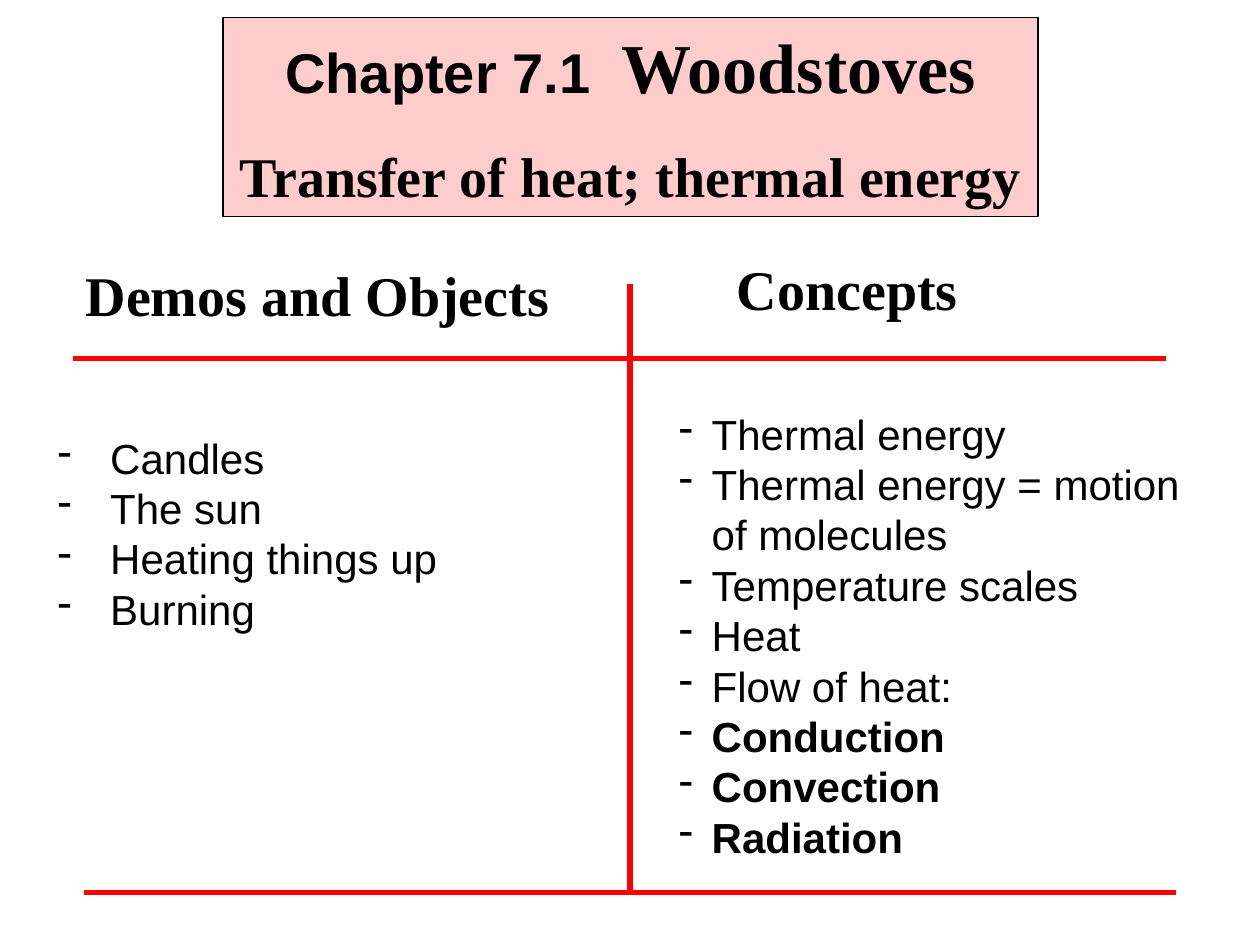
"""Build the Woodstoves chapter slide with its two-column overview."""
import pptx
import pptx.dml.color
import pptx.enum.shapes
import pptx.enum.text
import pptx.oxml
import pptx.util
from pptx.oxml.ns import qn

Pt = pptx.util.Pt
Color = pptx.dml.color.RGBColor.from_string

THEME = {
    "text": "000000", "banner": "FFCCCC", "rule": "FF0000",
    "sans": "Arial", "serif": "Times New Roman",
    "title": 40, "heading": 32, "body": 24,
    "border": 0.75, "rule_width": 3, "title_gap": 19.2,
}
BANNER = (127.4, 10.1, 465.8, 113.8)
CHAPTER = [("Chapter 7.1  ", "sans", "heading"), ("Woodstoves", "serif", "title")]
SUBTITLE = "Transfer of heat; thermal energy"
HEADINGS = [
    ("Demos and Objects", (41.8, 145.4, 289.4, 45.4)),
    ("Concepts", (414, 141.8, 154.8, 45.4)),
]
LISTS = [
    ((25.9, 243.4, 318.2, 123.8), 30,
     ["Candles", "The sun", "Heating things up", "Burning"], []),
    ((380.9, 229.7, 310.3, 269.3), 18.7,
     ["Thermal energy", "Thermal energy = motion of molecules",
      "Temperature scales", "Heat", "Flow of heat:"],
     ["Conduction", "Convection", "Radiation"]),
]
RULES = [
    (48, 510, 672, 510),
    (42, 205, 666, 205),
    (360, 162, 360, 510),
]


def set_font(font, family, size, bold):
    font.name = THEME[family]
    font.size = Pt(THEME[size])
    font.bold = bold
    font.color.rgb = Color(THEME["text"])


def add_text_box(slide, box):
    frame = slide.shapes.add_textbox(*map(Pt, box)).text_frame
    frame.word_wrap = True
    return frame


def add_banner(slide):
    shape = slide.shapes.add_shape(
        pptx.enum.shapes.MSO_SHAPE.RECTANGLE, *map(Pt, BANNER))
    shape.shadow.inherit = False
    shape.fill.solid()
    shape.fill.fore_color.rgb = Color(THEME["banner"])
    shape.line.color.rgb = Color(THEME["text"])
    shape.line.width = Pt(THEME["border"])
    frame = shape.text_frame
    frame.word_wrap = False
    frame.vertical_anchor = pptx.enum.text.MSO_ANCHOR.TOP
    chapter, subtitle = frame.paragraphs[0], frame.add_paragraph()
    for text, family, size in CHAPTER:
        run = chapter.add_run()
        run.text = text
        set_font(run.font, family, size, True)
    subtitle.text = SUBTITLE
    subtitle.space_before = Pt(THEME["title_gap"])
    set_font(subtitle.font, "serif", "heading", True)
    for paragraph in frame.paragraphs:
        paragraph.alignment = pptx.enum.text.PP_ALIGN.CENTER


def add_heading(slide, text, box):
    paragraph = add_text_box(slide, box).paragraphs[0]
    paragraph.text = text
    set_font(paragraph.font, "serif", "heading", True)


def add_list(slide, box, indent, plain, bold):
    frame = add_text_box(slide, box)
    for index, text in enumerate(plain + bold):
        paragraph = frame.add_paragraph() if index else frame.paragraphs[0]
        paragraph.text = text
        set_font(paragraph.font, "sans", "body", index >= len(plain))
        properties = paragraph._p.get_or_add_pPr()
        properties.set("marL", str(Pt(indent)))
        properties.set("indent", str(-Pt(indent)))
        bullet = pptx.oxml.parse_xml(
            '<a:buChar xmlns:a="http://schemas.openxmlformats.org/drawingml/2006/main" char="-"/>')
        properties.insert_element_before(bullet, "a:tabLst", "a:defRPr", "a:extLst")


def add_rule(slide, ends):
    connector = slide.shapes.add_connector(
        pptx.enum.shapes.MSO_CONNECTOR.STRAIGHT, *map(Pt, ends))
    connector.line.color.rgb = Color(THEME["rule"])
    connector.line.width = Pt(THEME["rule_width"])
    properties = connector._element.spPr
    properties.append(properties.makeelement(qn("a:effectLst"), {}))


def main():
    presentation = pptx.Presentation()
    presentation.slide_width, presentation.slide_height = Pt(720), Pt(540)
    slide = presentation.slides.add_slide(presentation.slide_layouts[6])
    add_banner(slide)
    for box, indent, plain, bold in LISTS:
        add_list(slide, box, indent, plain, bold)
    for ends in RULES:
        add_rule(slide, ends)
    for text, box in HEADINGS:
        add_heading(slide, text, box)
    presentation.save("out.pptx")


if __name__ == "__main__":
    main()
